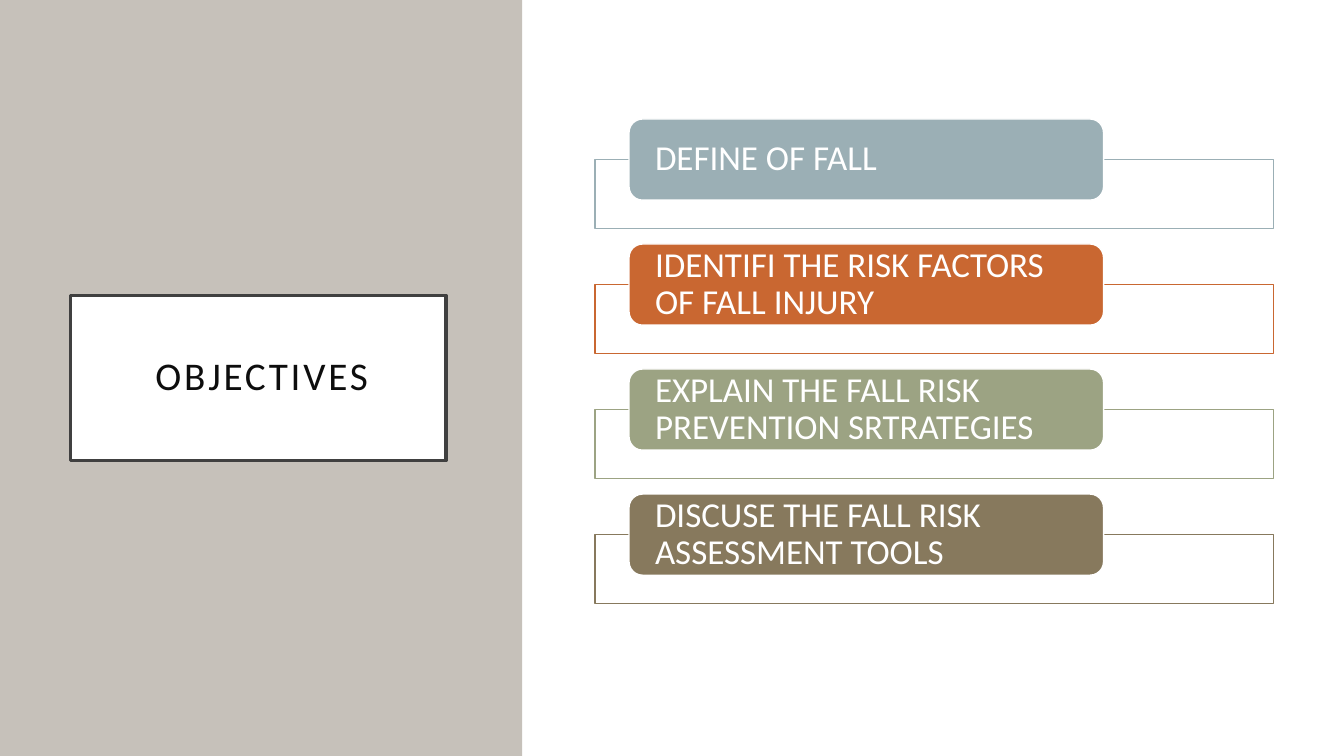
from dataclasses import dataclass

from lxml import etree
from pptx import Presentation
from pptx.dml.color import RGBColor
from pptx.enum import shapes, text
from pptx.oxml.ns import qn
from pptx.util import Pt

FONT = "Calibri"
WHITE = "FFFFFF"
FIRST_TOP = 85
PITCH = 89.3


@dataclass
class Objective:
    label: str
    color: str


@dataclass
class Box:
    left: float
    top: float
    width: float
    height: float


OBJECTIVES = [
    Objective("DEFINE OF FALL", "9BAFB5"),
    Objective("IDENTIFI THE RISK FACTORS OF FALL INJURY", "C96731"),
    Objective("EXPLAIN THE FALL RISK PREVENTION SRTRATEGIES", "9CA383"),
    Objective("DISCUSE THE FALL RISK ASSESSMENT TOOLS", "87795D"),
]


def rgb(color: str) -> RGBColor:
    return RGBColor.from_string(color)


def paint(sp, fill: str, line: str = "", weight: float = 1) -> None:
    sp.fill.solid()
    sp.fill.fore_color.rgb = rgb(fill)
    if line:
        sp.line.color.rgb = rgb(line)
        sp.line.width = Pt(weight)
    else:
        sp.line.fill.background()


def add_box(slide, kind, box: Box, fill: str, line: str = ""):
    sp = slide.shapes.add_shape(
        kind, Pt(box.left), Pt(box.top), Pt(box.width), Pt(box.height))
    sp.shadow.inherit = False
    paint(sp, fill, line)
    return sp


def write(sp, label: str, size: float, color: str, align, side: float, edge: float):
    tf = sp.text_frame
    tf.text = label
    tf.word_wrap = True
    tf.auto_size = text.MSO_AUTO_SIZE.NONE
    tf.vertical_anchor = text.MSO_ANCHOR.MIDDLE
    tf.margin_left = tf.margin_right = Pt(side)
    tf.margin_top = tf.margin_bottom = Pt(edge)
    p = tf.paragraphs[0]
    p.alignment = align
    p.line_spacing = 0.9
    p.font.name = FONT
    p.font.size = Pt(size)
    p.font.color.rgb = rgb(color)
    return p


def add_title(slide) -> None:
    sp = slide.shapes.title
    sp.left, sp.top, sp.width, sp.height = Pt(50.5), Pt(211), Pt(268), Pt(118)
    paint(sp, WHITE, "404040", 2.5)
    p = write(sp, "OBJECTIVES ", 28, "0D0D0D", text.PP_ALIGN.CENTER, 14.4, 14.4)
    p._p.get_or_add_pPr().set("rtl", "1")
    p.runs[0]._r.get_or_add_rPr().set("spc", "200")


def add_objective(slide, item: Objective, top: float) -> None:
    frame = add_box(slide, shapes.MSO_SHAPE.RECTANGLE,
                    Box(425, top + 28.8, 484.5, 49.6), WHITE, item.color)
    color = frame.fill._xPr.find(qn("a:solidFill"))[0]
    etree.SubElement(color, qn("a:alpha")).set("val", "90000")
    tab = add_box(slide, shapes.MSO_SHAPE.ROUNDED_RECTANGLE,
                  Box(449.3, top, 339, 58), item.color, WHITE)
    write(tab, item.label, 25, WHITE, text.PP_ALIGN.LEFT, 15.8, 0)


def main() -> None:
    prs = Presentation()
    prs.slide_width, prs.slide_height = Pt(960), Pt(540)
    slide = prs.slides.add_slide(prs.slide_layouts[5])
    panel = add_box(slide, shapes.MSO_SHAPE.RECTANGLE, Box(0, 0, 373, 540), "C6C1BA")
    slide.shapes.title._element.addprevious(panel._element)
    add_title(slide)
    add_box(slide, shapes.MSO_SHAPE.RECTANGLE, Box(374, 0, 586, 540), WHITE)
    for i, item in enumerate(OBJECTIVES):
        add_objective(slide, item, FIRST_TOP + i * PITCH)
    prs.save("out.pptx")


if __name__ == "__main__":
    main()
